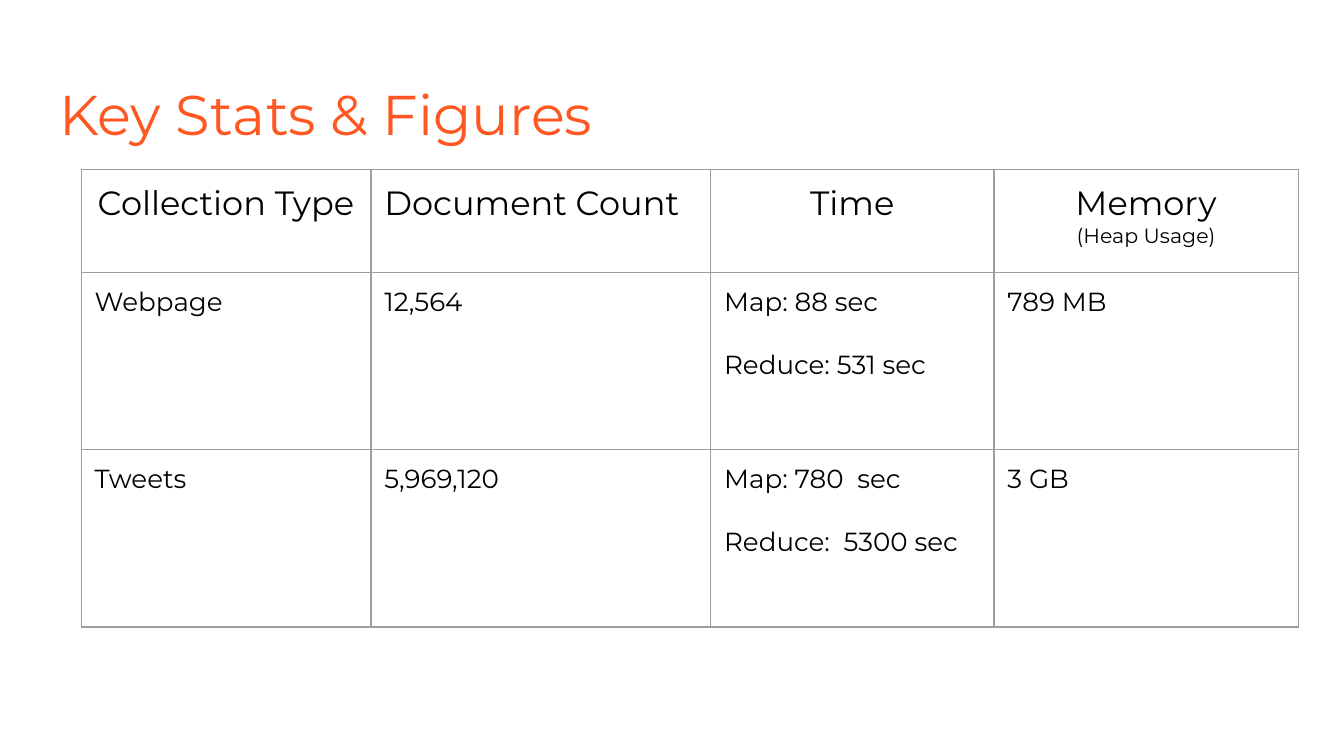
from dataclasses import dataclass

from lxml.etree import SubElement
from pptx import Presentation
from pptx.dml.color import RGBColor as RGB
from pptx.enum.text import MSO_ANCHOR as Anchor, MSO_AUTO_SIZE as AutoSize, PP_ALIGN as Align
from pptx.oxml.ns import qn
from pptx.util import Pt


@dataclass(frozen=True)
class Theme:
    font: str = "Montserrat"
    accent: str = "FF5722"
    ink: str = "000000"
    grid: str = "9E9E9E"
    title: float = 30
    header: float = 18
    body: float = 14
    note: float = 11
    grid_width: float = 0.75
    inset: float = 7.2
    gap: float = 17


def write(p, text, *, font, size, color, align=Align.LEFT, before=0):
    p.alignment = align
    p.space_before = Pt(before)
    r = p.add_run()
    r.text = text
    r.font.name = font
    r.font.size = Pt(size)
    r.font.bold = False
    r.font.color.rgb = RGB.from_string(color)


class SlideBuilder:
    def __init__(self, prs, theme):
        self.theme = theme
        self.s = prs.slides.add_slide(prs.slide_layouts[5])

    def title(self, text, left, top, width, height):
        t, sp = self.theme, self.s.shapes.title
        sp.left, sp.top, sp.width, sp.height = map(Pt, (left, top, width, height))
        tf = sp.text_frame
        tf.word_wrap = True
        tf.auto_size = AutoSize.NONE
        tf.vertical_anchor = Anchor.TOP
        tf.margin_left = tf.margin_right = tf.margin_top = tf.margin_bottom = Pt(t.inset)
        write(tf.paragraphs[0], text, font=t.font, size=t.title, color=t.accent)

    def table(self, rows, left, top, widths, heights):
        """Draw rows of cells, each cell a list of (text, format) lines."""
        frame = self.s.shapes.add_table(len(rows), len(widths), Pt(left), Pt(top),
                                        Pt(sum(widths)), Pt(sum(heights)))
        tbl = frame.table
        tbl.first_row = tbl.horz_banding = False
        for col, width in zip(tbl.columns, widths):
            col.width = Pt(width)
        for row, height, contents in zip(tbl.rows, heights, rows):
            row.height = Pt(height)
            for cell, lines in zip(row.cells, contents):
                self.cell(cell, lines)

    def cell(self, cell, lines):
        t = self.theme
        cell.margin_left = cell.margin_right = cell.margin_top = cell.margin_bottom = Pt(t.inset)
        cell.vertical_anchor = Anchor.TOP
        self.borders(cell)
        cell.fill.background()
        tf = cell.text_frame
        for i, (text, style) in enumerate(lines):
            p = tf.add_paragraph() if i else tf.paragraphs[0]
            write(p, text, font=t.font, color=t.ink, **style)

    def borders(self, cell):
        tcPr = cell._tc.get_or_add_tcPr()
        for side in ("a:lnL", "a:lnR", "a:lnT", "a:lnB"):
            ln = SubElement(tcPr, qn(side), w=str(Pt(self.theme.grid_width)))
            fill = SubElement(ln, qn("a:solidFill"))
            SubElement(fill, qn("a:srgbClr"), val=self.theme.grid)


def main():
    theme = Theme()
    prs = Presentation()
    prs.slide_width, prs.slide_height = Pt(720), Pt(405)
    slide = SlideBuilder(prs, theme)
    slide.title("Key Stats & Figures", 24.5, 35.3, 671, 45.4)

    heading = dict(size=theme.header, align=Align.CENTER)
    note = dict(size=theme.note, align=Align.CENTER)
    body = dict(size=theme.body)
    spaced = dict(size=theme.body, before=theme.gap)

    header = [
        [("Collection Type", heading)],
        [("Document Count", dict(size=theme.header))],
        [("Time", heading)],
        [("Memory", heading), ("(Heap Usage)", note)],
    ]
    stats = [
        ("Webpage", "12,564", "Map: 88 sec", "Reduce: 531 sec", "789 MB"),
        ("Tweets", "5,969,120", "Map: 780  sec", "Reduce:  5300 sec", "3 GB"),
    ]
    rows = [header] + [
        [[(kind, body)], [(count, body)], [(map_time, body), (reduce_time, spaced)], [(memory, body)]]
        for kind, count, map_time, reduce_time, memory in stats
    ]
    slide.table(rows, 43.5, 90.7, widths=(155.2, 182, 151.8, 163), heights=(55.2, 95, 95))
    prs.save("out.pptx")


if __name__ == "__main__":
    main()
